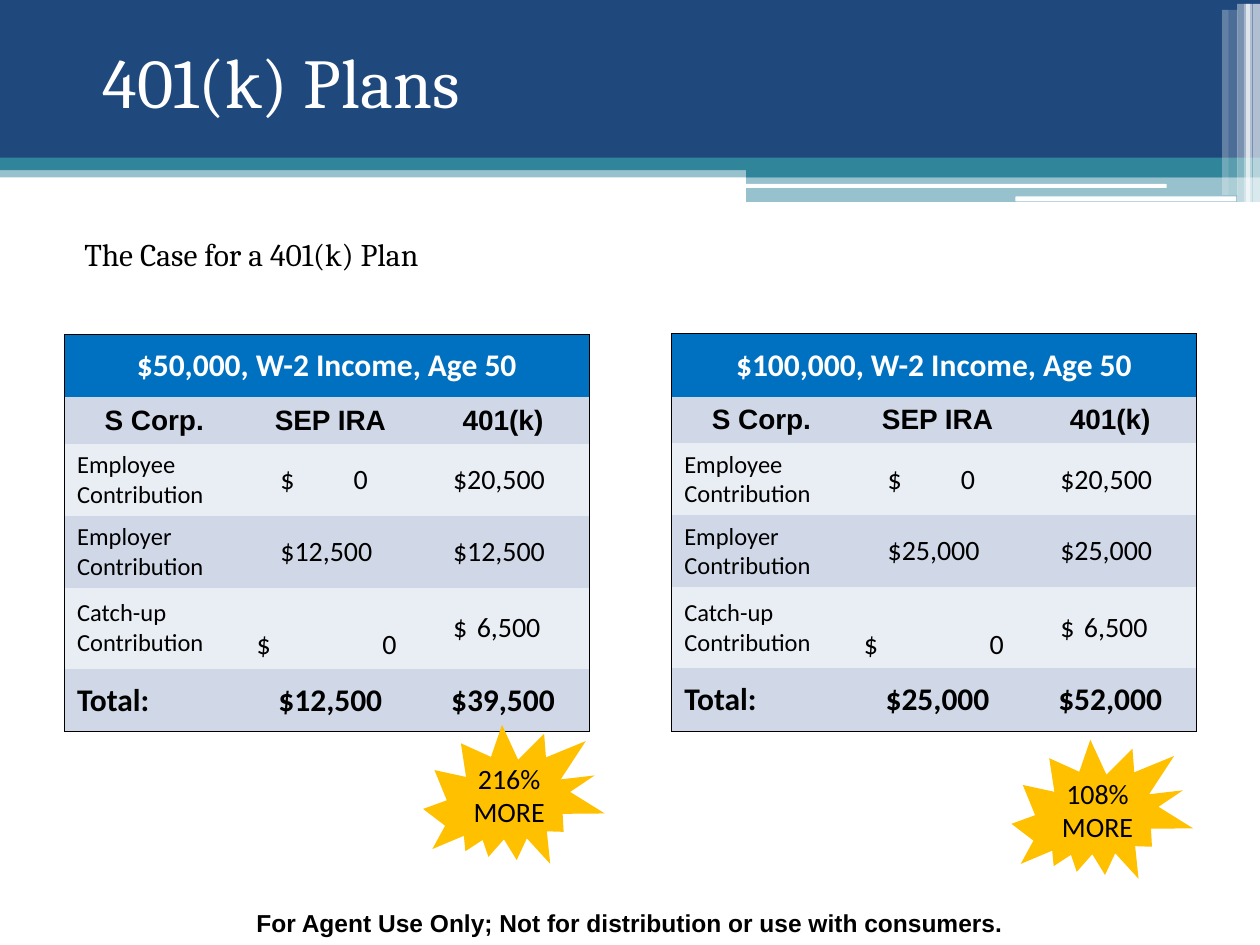
from lxml import etree
from pptx import Presentation
from pptx.dml.color import RGBColor
from pptx.enum.shapes import MSO_SHAPE
from pptx.enum.text import MSO_ANCHOR, PP_ALIGN
from pptx.oxml import parse_xml
from pptx.oxml.ns import nsdecls, qn
from pptx.util import Cm, Pt

NAVY = RGBColor(0x1F, 0x49, 0x7D)
TEAL = RGBColor(0x31, 0x85, 0x9B)
BLUE = RGBColor(0x00, 0x70, 0xC0)
GOLD = RGBColor(0xFF, 0xC0, 0x00)
DARK_BAND = RGBColor(0xD0, 0xD8, 0xE8)
LIGHT_BAND = RGBColor(0xE9, 0xED, 0xF4)
BLACK = RGBColor(0, 0, 0)
WHITE = RGBColor(0xFF, 0xFF, 0xFF)

SLIDE_WIDTH, SLIDE_HEIGHT = 25.4, 19.05
COLUMN_WIDTHS = [3.62, 3.48, 3.48]
ROW_HEIGHTS = [1.27, 0.94, 1.45, 1.45, 1.63, 1.27]
NO_STYLE_NO_GRID = "{2D5ABB26-0587-4C30-8999-92F81FD0307C}"
AMOUNT_TABS = [(0.48, "l"), (2.24, "r")]
WIDE_TABS = [(2.82, "r")]


def add_filled_shape(shapes, kind, box, color, opacity=100):
    shape = shapes.add_shape(kind, *map(Cm, box))
    shape.shadow.inherit = False
    shape.line.fill.background()
    shape.fill.solid()
    shape.fill.fore_color.rgb = color
    if opacity < 100:
        color_element = shape.fill._xPr.find(qn("a:solidFill"))[0]
        etree.SubElement(color_element, qn("a:alpha"), val=str(opacity * 1000))
    return shape


def add_styled_run(paragraph, text, size, font, color=BLACK, bold=False):
    run = paragraph.add_run()
    run.text = text
    run.font.size = Pt(size)
    run.font.name = font
    run.font.bold = bold
    run.font.color.rgb = color


def add_text(shapes, box, lines, size, font, color=BLACK, bold=False,
             align=PP_ALIGN.LEFT, anchor=MSO_ANCHOR.TOP):
    text_box = shapes.add_textbox(*map(Cm, box))
    frame = text_box.text_frame
    frame.word_wrap = True
    frame.vertical_anchor = anchor
    for index, line in enumerate(lines):
        paragraph = frame.add_paragraph() if index else frame.paragraphs[0]
        paragraph.alignment = align
        add_styled_run(paragraph, line, size, font, color, bold)
    return frame


def add_header(slide, left, top, width):
    bands = [
        (0, 3.35, width, 0.23, TEAL, 50),
        (0, 0, width, 3.2, NAVY, 100),
        (0, 3.18, width, 0.25, TEAL, 100),
        (15.04, 3.33, width - 15.04, 0.25, TEAL, 100),
        (15.04, 3.56, width - 15.04, 0.51, TEAL, 50),
    ]
    stripes = [
        (25.25, 0.08, 0.15, 3.99, WHITE, 65),
        (25.12, 0.08, 0.13, 3.99, WHITE, 65),
        (25.07, 0.08, 0.13, 3.99, WHITE, 60),
        (24.94, 0.08, 0.13, 3.99, WHITE, 40),
        (24.77, 0.2, 0.18, 3.73, WHITE, 20),
        (24.64, 0.2, 0.13, 3.73, WHITE, 30),
    ]
    rules = [(15.01, 3.71, 8.51, 0.08, WHITE, 100),
             (20.47, 3.96, 4.45, 0.1, WHITE, 100)]
    for kind, parts in [(MSO_SHAPE.RECTANGLE, bands),
                        (MSO_SHAPE.ROUNDED_RECTANGLE, rules),
                        (MSO_SHAPE.RECTANGLE, stripes)]:
        for x, y, part_width, height, color, opacity in parts:
            add_filled_shape(slide.shapes, kind,
                             (left + x, top + y, part_width, height), color, opacity)
    title = add_text(slide.shapes, (left + 1.07, top + 0.23, 22.86, 2.79),
                     ["401(k) Plans"], 40, "Cambria", WHITE, anchor=MSO_ANCHOR.MIDDLE)
    title.margin_left = Cm(1)


def set_tabs(paragraph, tabs):
    tab_list = etree.SubElement(paragraph._p.get_or_add_pPr(), qn("a:tabLst"))
    for position, align in tabs:
        etree.SubElement(tab_list, qn("a:tab"), pos=str(Cm(position)), algn=align)


def set_outer_borders(cell, row, column):
    """Outline the table: only sides on its rim get a line."""
    last_row, last_column = len(ROW_HEIGHTS) - 1, len(COLUMN_WIDTHS) - 1
    sides = {"L": column == 0, "R": column == last_column or row == 0,
             "T": row == 0, "B": row == last_row}
    for side, on_rim in sides.items():
        if on_rim:
            cell._tc.get_or_add_tcPr().append(parse_xml(
                f'<a:ln{side} {nsdecls("a")} w="9525"><a:solidFill>'
                f'<a:srgbClr val="{BLACK}"/></a:solidFill></a:ln{side}>'))


def fill_cell(cell, row, column, text):
    set_outer_borders(cell, row, column)
    cell.fill.solid()
    cell.fill.fore_color.rgb = BLUE if row == 0 else (LIGHT_BAND, DARK_BAND)[row % 2]
    cell.vertical_anchor = MSO_ANCHOR.MIDDLE
    if not text:
        return
    paragraph = cell.text_frame.paragraphs[0]
    is_total = row == len(ROW_HEIGHTS) - 1
    if row < 2 or is_total and column:
        paragraph.alignment = PP_ALIGN.CENTER
    if text.startswith("$\t"):
        cell.vertical_anchor = MSO_ANCHOR.BOTTOM
        set_tabs(paragraph, WIDE_TABS)
    elif text.startswith("\t"):
        set_tabs(paragraph, AMOUNT_TABS)

    if row == 0:
        add_styled_run(paragraph, text, 18, "Calibri", WHITE, bold=True)
    elif row == 1:
        add_styled_run(paragraph, text, 16, "Arial", bold=True)
    elif is_total:
        add_styled_run(paragraph, text, 18, "Calibri", bold=True)
    else:
        add_styled_run(paragraph, text, 16 if column else 14, "Calibri")


def add_plan_table(slide, left, top, income, employer, total):
    rows = [
        [f"{income}, W-2 Income, Age 50", "", ""],
        ["S Corp.", "SEP IRA", "401(k)"],
        ["Employee Contribution", "\t$\t0", "\t$\t20,500"],
        ["Employer Contribution", f"\t$\t{employer}", f"\t$\t{employer}"],
        ["Catch-up Contribution", "$\t0", "\t$\t6,500"],
        ["Total:", f"${employer}", total],
    ]
    frame = slide.shapes.add_table(
        len(rows), len(COLUMN_WIDTHS), Cm(left), Cm(top),
        Cm(sum(COLUMN_WIDTHS)), Cm(sum(ROW_HEIGHTS)))
    table = frame.table
    table._tbl.tblPr.find(qn("a:tableStyleId")).text = NO_STYLE_NO_GRID
    for column, width in zip(table.columns, COLUMN_WIDTHS):
        column.width = Cm(width)
    for row, height in zip(table.rows, ROW_HEIGHTS):
        row.height = Cm(height)
    table.cell(0, 0).merge(table.cell(0, 2))
    for row, texts in enumerate(rows):
        for column, text in enumerate(texts):
            fill_cell(table.cell(row, column), row, column, text)


def add_burst(slide, left, top, percent):
    group = slide.shapes.add_group_shape()
    seal = add_filled_shape(group.shapes, MSO_SHAPE.EXPLOSION2,
                            (left, top, 3.4, 3.45), GOLD)
    seal.rotation = 30.6
    add_text(group.shapes, (left + 0.56, top + 0.84, 2.03, 1.63),
             [percent, "MORE"], 16, "Calibri", align=PP_ALIGN.CENTER)


def main():
    presentation = Presentation()
    presentation.slide_width = Cm(SLIDE_WIDTH)
    presentation.slide_height = Cm(SLIDE_HEIGHT)
    slide = presentation.slides.add_slide(presentation.slide_layouts[6])

    add_header(slide, 0, 0, SLIDE_WIDTH)
    add_text(slide.shapes, (0, 18.19, SLIDE_WIDTH, 0.86),
             ["For Agent Use Only; Not for distribution or use with consumers."],
             14, "Arial", bold=True, align=PP_ALIGN.CENTER)
    add_plan_table(slide, 1.3, 6.74, "$50,000", "12,500", "$39,500")
    add_plan_table(slide, 13.54, 6.73, "$100,000", "25,000", "$52,000")
    add_burst(slide, 8.69, 14.38, "216%")
    add_burst(slide, 20.55, 14.68, "108%")
    add_text(slide.shapes, (1.45, 4.62, 12.7, 1.02),
             ["The Case for a 401(k) Plan"], 18, "Cambria")
    presentation.save("out.pptx")


if __name__ == "__main__":
    main()
